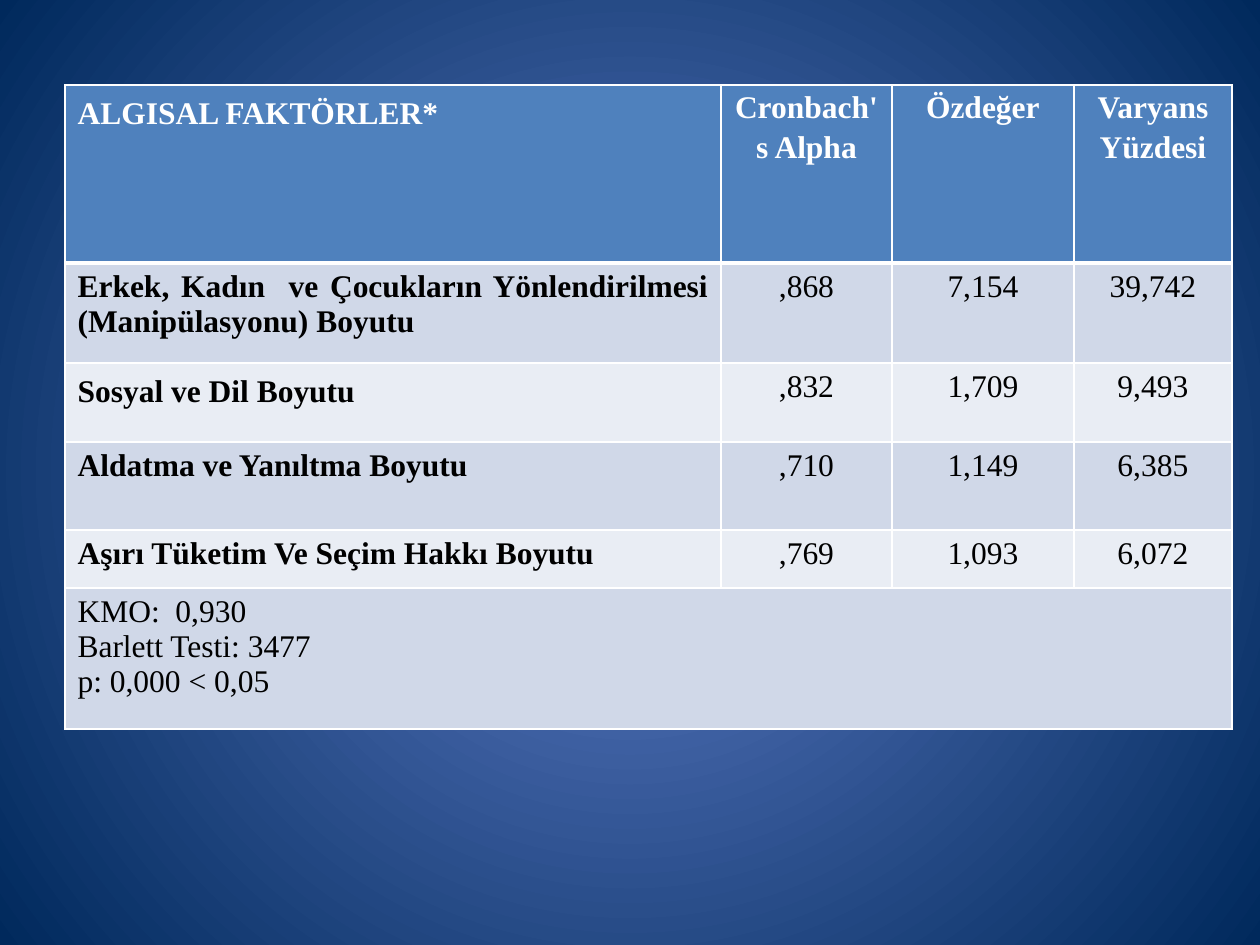
from lxml import etree
from pptx import Presentation
from pptx import util as u
from pptx.dml.color import RGBColor
from pptx.enum import text
from pptx.oxml.ns import qn

PX = 914400 / 126
WHITE = RGBColor(0xFF, 0xFF, 0xFF)
BLACK = RGBColor(0x00, 0x00, 0x00)
HEADER_BLUE = RGBColor(0x4F, 0x81, 0xBD)
BAND_DARK = RGBColor(0xD0, 0xD8, 0xE8)
BAND_LIGHT = RGBColor(0xE9, 0xED, 0xF4)
GLOW_CENTRE = RGBColor(0x5E, 0x7C, 0xC5)
GLOW_EDGE = RGBColor(0x00, 0x29, 0x5C)
FONT = "Times New Roman"

COLUMN_WIDTHS = [656, 171, 182, 158]
ROW_HEIGHTS = [178, 100, 79, 88, 58, 141]
HEADINGS = ["ALGISAL FAKTÖRLER*", "Cronbach's Alpha", "Özdeğer", "Varyans Yüzdesi"]
FACTORS = [
    ["Erkek, Kadın  ve Çocukların Yönlendirilmesi (Manipülasyonu) Boyutu",
     ",868", "7,154", "39,742"],
    ["Sosyal ve Dil Boyutu", ",832", "1,709", "9,493"],
    ["Aldatma ve Yanıltma Boyutu", ",710", "1,149", "6,385"],
    ["Aşırı Tüketim Ve Seçim Hakkı Boyutu", ",769", "1,093", "6,072"],
]
TEST_RESULTS = ["KMO:  0,930", "Barlett Testi: 3477", "p: 0,000 < 0,05"]
SPACED_FACTOR = "Sosyal ve Dil Boyutu"


def px(length):
    """Turn a length in px into EMU."""
    return u.Emu(round(length * PX))


def paint_background(slide):
    """Fill the slide with a glow that darkens from its centre outwards."""
    fill = slide.background.fill
    fill.gradient()
    for stop, colour in zip(fill.gradient_stops, (GLOW_CENTRE, GLOW_EDGE)):
        stop.color.rgb = colour
    linear = next(slide.element.iter(qn("a:lin")))
    glow = etree.Element(qn("a:path"), {"path": "circle"})
    etree.SubElement(glow, qn("a:fillToRect"), dict.fromkeys("ltrb", "50000"))
    linear.getparent().replace(linear, glow)


def style_cell(cell, colour, bottom=1, top=1):
    """Give a cell white borders, with widths in points, and a solid fill."""
    properties = cell._tc.get_or_add_tcPr()
    for side, width in (("L", 1), ("R", 1), ("T", top), ("B", bottom)):
        border = etree.SubElement(properties, qn(f"a:ln{side}"), w=str(u.Pt(width)))
        ink = etree.SubElement(border, qn("a:solidFill"))
        etree.SubElement(ink, qn("a:srgbClr"), val=str(WHITE))
    cell.fill.solid()
    cell.fill.fore_color.rgb = colour


def write_cell(cell, lines, align, colour=BLACK, bold=False, spacing=1.0):
    """Write each line as a paragraph of the cell."""
    frame = cell.text_frame
    for index, line in enumerate(lines):
        paragraph = frame.add_paragraph() if index else frame.paragraphs[0]
        paragraph.alignment = align
        paragraph.line_spacing = spacing
        run = paragraph.add_run()
        run.text = line
        run.font.name = FONT
        run.font.size = u.Pt(18)
        run.font.bold = bold
        run.font.color.rgb = colour


def add_factor_table(slide, left, top, width, height):
    """Place the factor analysis table in the given box."""
    table = slide.shapes.add_table(
        len(ROW_HEIGHTS), len(COLUMN_WIDTHS), px(left), px(top), px(width), px(height)
    ).table
    for column, share in zip(table.columns, COLUMN_WIDTHS):
        column.width = px(width * share / sum(COLUMN_WIDTHS))
    for row, share in zip(table.rows, ROW_HEIGHTS):
        row.height = px(height * share / sum(ROW_HEIGHTS))

    aligns = [text.PP_ALIGN.JUSTIFY] + [text.PP_ALIGN.CENTER] * 3
    for column, heading in enumerate(HEADINGS):
        cell = table.cell(0, column)
        style_cell(cell, HEADER_BLUE, bottom=3)
        write_cell(cell, [heading], aligns[column], WHITE, True, 1.15)
        if column:
            cell.margin_left = cell.margin_right = px(9)
            cell.margin_top = cell.margin_bottom = 0

    for row, factor in enumerate(FACTORS, 1):
        for column, value in enumerate(factor):
            cell = table.cell(row, column)
            style_cell(cell, BAND_DARK if row % 2 else BAND_LIGHT, top=3 if row == 1 else 1)
            spacing = 1.15 if value == SPACED_FACTOR else 1.0
            write_cell(cell, [value], aligns[column], bold=column == 0, spacing=spacing)

    last = len(ROW_HEIGHTS) - 1
    for column in range(len(COLUMN_WIDTHS)):
        style_cell(table.cell(last, column), BAND_DARK)
    results = table.cell(last, 0)
    results.merge(table.cell(last, len(COLUMN_WIDTHS) - 1))
    write_cell(results, TEST_RESULTS, text.PP_ALIGN.LEFT)


def main():
    """Build the slide and save it."""
    deck = Presentation()
    deck.slide_width, deck.slide_height = px(1260), px(945)
    slide = deck.slides.add_slide(deck.slide_layouts[6])
    paint_background(slide)
    add_factor_table(slide, 65, 85, sum(COLUMN_WIDTHS), sum(ROW_HEIGHTS))
    deck.save("out.pptx")


if __name__ == "__main__":
    main()
